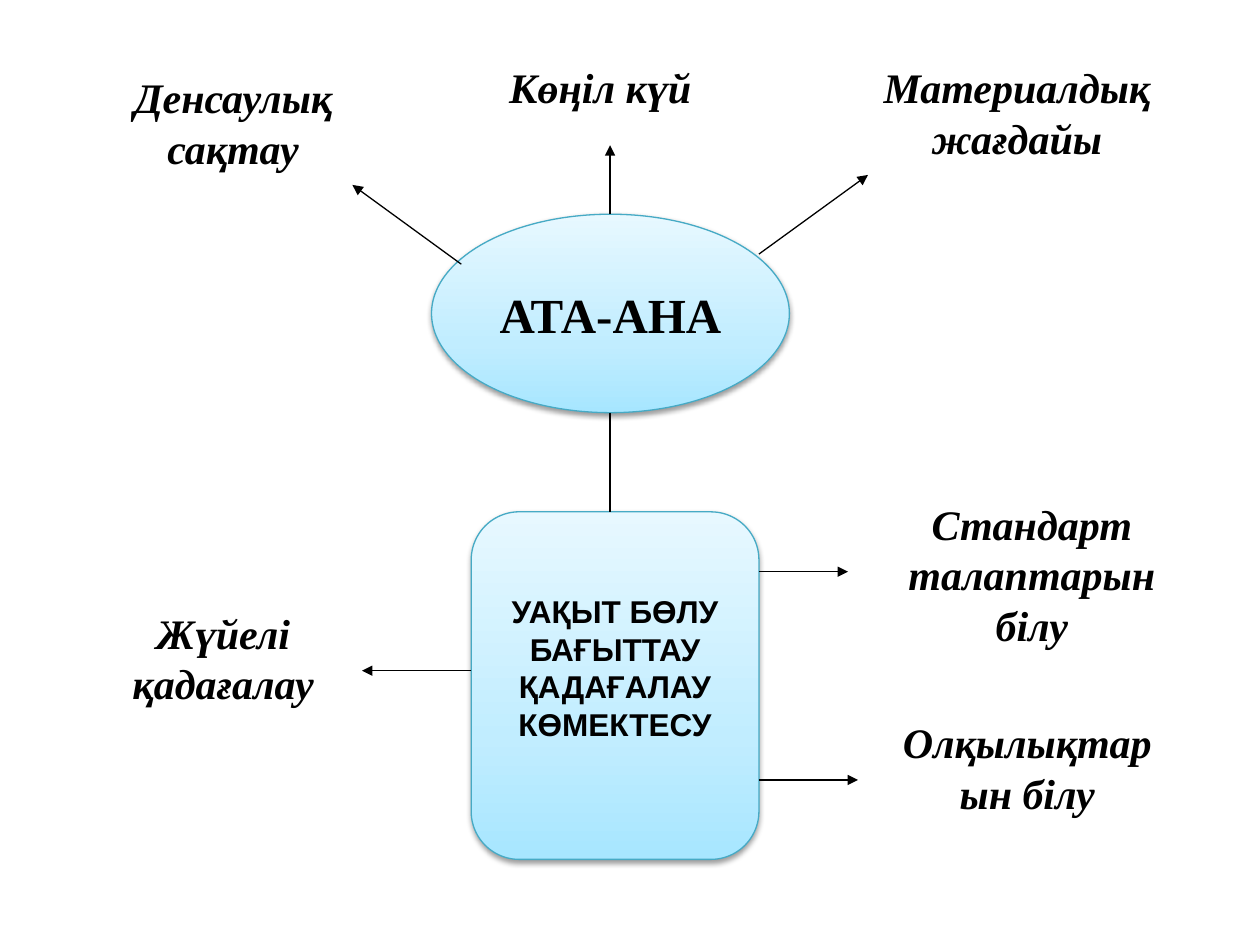
from copy import deepcopy

from lxml.etree import SubElement
from pptx import Presentation
from pptx.dml.color import RGBColor
from pptx.enum.shapes import MSO_CONNECTOR as Connector, MSO_SHAPE as Shape
from pptx.enum.text import MSO_ANCHOR as Anchor, PP_ALIGN as Align
from pptx.oxml.ns import qn
from pptx.util import Pt


def color(hex_code):
    return RGBColor.from_string(hex_code)


def write_text(frame, text, font="Times New Roman", size=24, bold=True,
               italic=False, fill="000000", anchor=Anchor.TOP):
    """Fill a text frame with one centred paragraph for each line of text."""
    frame.word_wrap = True
    frame.vertical_anchor = anchor
    for index, line in enumerate(text.split("\n")):
        paragraph = frame.paragraphs[0] if index == 0 else frame.add_paragraph()
        paragraph.alignment = Align.CENTER
        run = paragraph.add_run()
        run.text = line
        run.font.name = font
        run.font.size = Pt(size)
        run.font.bold = bold
        run.font.italic = italic
        run.font.color.rgb = color(fill)


class Diagram:
    ink = "000000"
    border = "46AAC5"
    bottom, middle, top = "A7E6FF", "C1EDFF", "E7F8FF"
    line_width = 0.75

    def __init__(self, slide):
        self.slide = slide

    def node(self, kind, left, top, width, height, text, bottom_inset=3.6, **style):
        shape = self.slide.shapes.add_shape(
            kind, Pt(left), Pt(top), Pt(width), Pt(height))
        self.shade(shape)
        shape.line.color.rgb = color(self.border)
        shape.line.width = Pt(self.line_width)
        self.soft_shadow(shape)
        shape.text_frame.margin_bottom = Pt(bottom_inset)
        write_text(shape.text_frame, text, anchor=Anchor.MIDDLE, **style)

    def shade(self, shape):
        """Apply the three-stop gradient that runs from bottom to top."""
        shape.fill.gradient()
        shape.fill.gradient_angle = 90
        first, last = shape.fill.gradient_stops
        first.color.rgb = color(self.middle)
        last.color.rgb = color(self.top)
        stops = shape.element.spPr.find(".//" + qn("a:gsLst"))
        middle = deepcopy(stops[0])
        middle.set("pos", "35000")
        stops.insert(1, middle)
        first.color.rgb = color(self.bottom)

    def soft_shadow(self, shape):
        shape.shadow.inherit = False
        effects = shape.element.spPr.find(qn("a:effectLst"))
        shadow = SubElement(effects, qn("a:outerShdw"), blurRad=str(Pt(3.1)),
                            dist=str(Pt(1.6)), dir="5400000", rotWithShape="0")
        shade = SubElement(shadow, qn("a:srgbClr"), val=self.ink)
        SubElement(shade, qn("a:alpha"), val="38000")

    def label(self, left, top, width, height, text):
        box = self.slide.shapes.add_textbox(
            Pt(left), Pt(top), Pt(width), Pt(height))
        write_text(box.text_frame, text, italic=True)

    def link(self, start, end, arrow=True):
        connector = self.slide.shapes.add_connector(
            Connector.STRAIGHT, *(Pt(value) for value in (*start, *end)))
        connector.line.color.rgb = color(self.ink)
        connector.line.width = Pt(self.line_width)
        properties = connector.element.spPr
        if arrow:
            SubElement(properties.find(qn("a:ln")), qn("a:tailEnd"), type="triangle")
        SubElement(properties, qn("a:effectLst"))


def main():
    presentation = Presentation()
    presentation.slide_width, presentation.slide_height = Pt(720), Pt(540)
    diagram = Diagram(presentation.slides.add_slide(presentation.slide_layouts[6]))

    diagram.node(Shape.OVAL, 246.6, 122.4, 204.5, 113.4, "АТА-АНА", size=28)
    diagram.node(Shape.ROUNDED_RECTANGLE, 269.3, 292.5, 164.4, 198.6,
                 "УАҚЫТ БӨЛУ\nБАҒЫТТАУ\nҚАДАҒАЛАУ\nКӨМЕКТЕСУ",
                 bottom_inset=24.3, font="Arial", size=18)

    for label in (
        (275, 31.7, 136, 36, "Көңіл күй"),
        (48.2, 37.4, 170, 65, "Денсаулық сақтау"),
        (484.6, 31.7, 193, 65, "Материалдық жағдайы"),
        (42.5, 343.5, 170, 65, "Жүйелі қадағалау"),
        (496, 281.2, 187.2, 94, "Стандарт талаптарын білу"),
        (502, 406, 170, 65, "Олқылықтарын білу"),
    ):
        diagram.label(*label)

    axis, box_left, box_right = 348.6, 269.3, 433.7
    for start, end in (
        ((axis, 122.4), (axis, 83)),
        ((box_right, 145.2), (496, 100)),
        ((263.6, 151), (201.4, 105.7)),
        ((box_left, 383.3), (206.9, 383.3)),
        ((box_right, 326.7), (484.6, 326.7)),
        ((box_right, 445.7), (490.3, 445.7)),
    ):
        diagram.link(start, end)
    diagram.link((axis, 235.8), (axis, 292.5), arrow=False)

    presentation.save("out.pptx")


if __name__ == "__main__":
    main()
